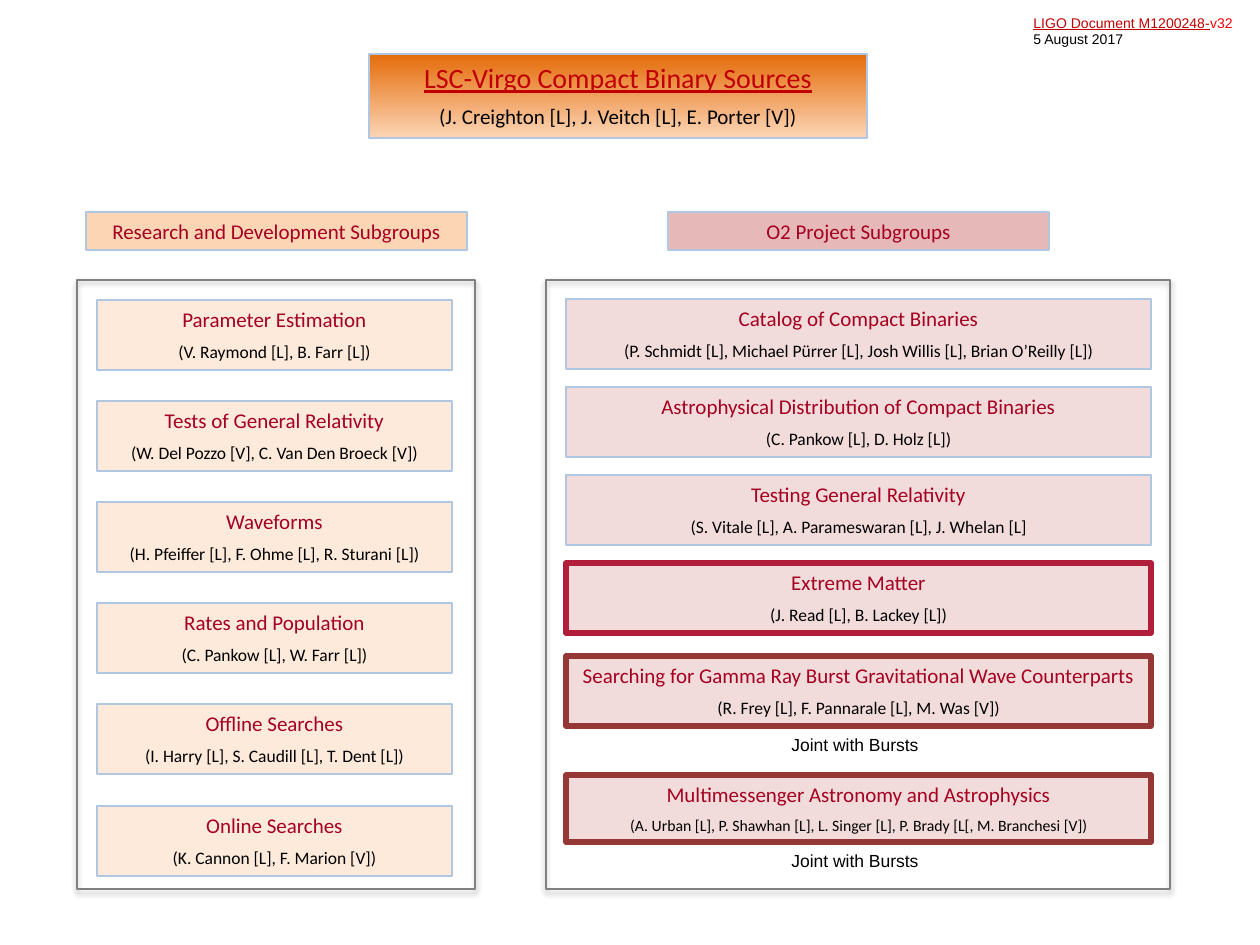
from lxml import etree
from pptx import Presentation
from pptx.dml.color import RGBColor
from pptx.enum.shapes import MSO_SHAPE as SHAPE
from pptx.enum.text import MSO_ANCHOR as ANCHOR, PP_ALIGN as ALIGN
from pptx.oxml.ns import qn
from pptx.util import Emu, Pt

EMU_PER_PX = 914400 / 126
HEADING, TITLE, BLACK = "A50021", "C00000", "000000"
PALE_BLUE, CRIMSON, BRICK = "B0C6E1", "B01E3B", "953735"
BOX_H, INSET = 70, 20

RESEARCH = [
    ("Parameter Estimation", "(V. Raymond [L], B. Farr [L])"),
    ("Tests of General Relativity", "(W. Del Pozzo [V], C. Van Den Broeck [V])"),
    ("Waveforms", "(H. Pfeiffer [L], F. Ohme [L], R. Sturani [L])"),
    ("Rates and Population", "(C. Pankow [L], W. Farr [L])"),
    ("Offline Searches", "(I. Harry [L], S. Caudill [L], T. Dent [L])"),
    ("Online Searches", "(K. Cannon [L], F. Marion [V])"),
]
# name, chairs, border colour, border width
PROJECTS = [
    ("Catalog of Compact Binaries",
     "(P. Schmidt [L], Michael Pürrer [L], Josh Willis [L], Brian O’Reilly [L])", PALE_BLUE, 1),
    ("Astrophysical Distribution of Compact Binaries",
     "(C. Pankow [L], D. Holz [L])", PALE_BLUE, 1),
    ("Testing General Relativity",
     "(S. Vitale [L], A. Parameswaran [L], J. Whelan [L]", PALE_BLUE, 1),
    ("Extreme Matter", "(J. Read [L], B. Lackey [L])", CRIMSON, 3),
]
# top within the panel, height, name, chairs, chairs' text size
JOINT_PROJECTS = [
    (376, 70, "Searching for Gamma Ray Burst Gravitational Wave Counterparts",
     "(R. Frey [L], F. Pannarale [L], M. Was [V])", 10),
    (495, 67, "Multimessenger Astronomy and Astrophysics",
     "(A. Urban [L], P. Shawhan [L], L. Singer [L], P. Brady [L[, M. Branchesi [V])", 9),
]


def px(n):
    return Emu(round(n * EMU_PER_PX))


def rgb(color):
    return RGBColor.from_string(color)


def style(r, size, color, font="Calibri", underline=None):
    r.font.size, r.font.name, r.font.underline = Pt(size), font, underline
    r.font.color.rgb = rgb(color)


def add_rect(s, x, y, w, h, fill, line, width=1):
    sp = s.shapes.add_shape(SHAPE.RECTANGLE, px(x), px(y), px(w), px(h))
    sp.shadow.inherit = False
    if fill:
        sp.fill.solid()
        sp.fill.fore_color.rgb = rgb(fill)
    else:
        sp.fill.background()
    sp.line.color.rgb = rgb(line)
    sp.line.width = Pt(width)
    return sp


def add_box(s, x, y, w, h, fill, lines, line=PALE_BLUE, width=1):
    """Rectangle with centred lines, each (text, size, colour)."""
    sp = add_rect(s, x, y, w, h, fill, line, width)
    tf = sp.text_frame
    tf.word_wrap, tf.vertical_anchor = True, ANCHOR.TOP
    tf.text = "\n".join(text for text, _, _ in lines)
    for i, (p, (_, size, color)) in enumerate(zip(tf.paragraphs, lines)):
        p.alignment = ALIGN.CENTER
        if i:
            p.space_before = Pt(5.5)
        style(p.runs[0], size, color)
    return sp


def add_group_box(s, x, y, w, h, fill, name, chairs, size=10, line=PALE_BLUE, width=1):
    lines = [(name, 12, HEADING), (chairs, size, BLACK)]
    add_box(s, x, y, w, h, fill, lines, line, width)


def add_label(s, x, y, w, h, text, size, color, wrap=True):
    tf = s.shapes.add_textbox(px(x), px(y), px(w), px(h)).text_frame
    tf.word_wrap = wrap
    tf.text = text
    for p in tf.paragraphs:
        style(p.runs[0], size, color, "Arial")
    return tf


def add_panel(s, x, y, w, h, heading, heading_fill):
    """Shadowed frame with its heading centred above it."""
    add_box(s, x + w // 2 - 190, y - 68, 381, 38, heading_fill, [(heading, 12, HEADING)])
    sp = add_rect(s, x, y, w, h, None, "808080")
    effects = sp._element.spPr.find(qn("a:effectLst"))
    shadow = etree.SubElement(effects, qn("a:outerShdw"), blurRad=str(Pt(3.1)),
                              dist=str(Pt(1.8)), dir="5400000", rotWithShape="0")
    color = etree.SubElement(shadow, qn("a:srgbClr"), val=BLACK)
    etree.SubElement(color, qn("a:alpha"), val="35000")


def add_research(s, x, y, w, h):
    add_panel(s, x, y, w, h, "Research and Development Subgroups", "FCD5B5")
    span = h - INSET - BOX_H - 13
    for i, (name, chairs) in enumerate(RESEARCH):
        top = y + INSET + span * i // (len(RESEARCH) - 1)
        add_group_box(s, x + INSET, top, 355, BOX_H, "FDEADA", name, chairs)


def add_projects(s, x, y, w, h):
    add_panel(s, x, y, w, h, "O2 Project Subgroups", "E6B9B8")
    left, box_w, fill = x + INSET, w - 2 * INSET + 1, "F2DCDB"
    for i, (name, chairs, line, width) in enumerate(PROJECTS):
        add_group_box(s, left, y + 19 + 88 * i, box_w, BOX_H, fill, name, chairs,
                      line=line, width=width)
    for top, box_h, name, chairs, size in JOINT_PROJECTS:
        add_group_box(s, left, y + top, box_w, box_h, fill, name, chairs, size, BRICK, 3)
        add_label(s, x + 233, y + top + box_h + 2, 159, 34, "Joint with Bursts", 10, BLACK, False)


def add_title(s, x, y, w, h):
    sp = add_box(s, x, y, w, h, "E46C0A", [
        ("LSC-Virgo Compact Binary Sources", 16, TITLE),
        ("(J. Creighton [L], J. Veitch [L], E. Porter [V])", 12, BLACK)])
    sp.text_frame.paragraphs[0].runs[0].font.underline = True
    sp.fill.gradient()
    sp.fill.gradient_angle = 270
    for stop, color, position in zip(sp.fill.gradient_stops, ("E46C0A", "FCD5B5"), (0, 1)):
        stop.color.rgb = rgb(color)
        stop.position = position


def add_document_id(s, x, y, w, h):
    tf = add_label(s, x, y, w, h, "LIGO Document M1200248-\n5 August 2017", 8, BLACK)
    p = tf.paragraphs[0]
    style(p.runs[0], 8, TITLE, "Arial", True)
    r = p.add_run()
    r.text = "v32"
    style(r, 8, "FF0000", "Arial", False)


def main():
    prs = Presentation()
    prs.slide_width, prs.slide_height = px(1260), px(945)
    s = prs.slides.add_slide(prs.slide_layouts[6])
    add_document_id(s, 1021, 8, 232, 47)
    add_title(s, 369, 54, 498, 84)
    add_research(s, 77, 280, 398, 609)
    add_projects(s, 546, 280, 624, 609)
    prs.save("out.pptx")


if __name__ == "__main__":
    main()
